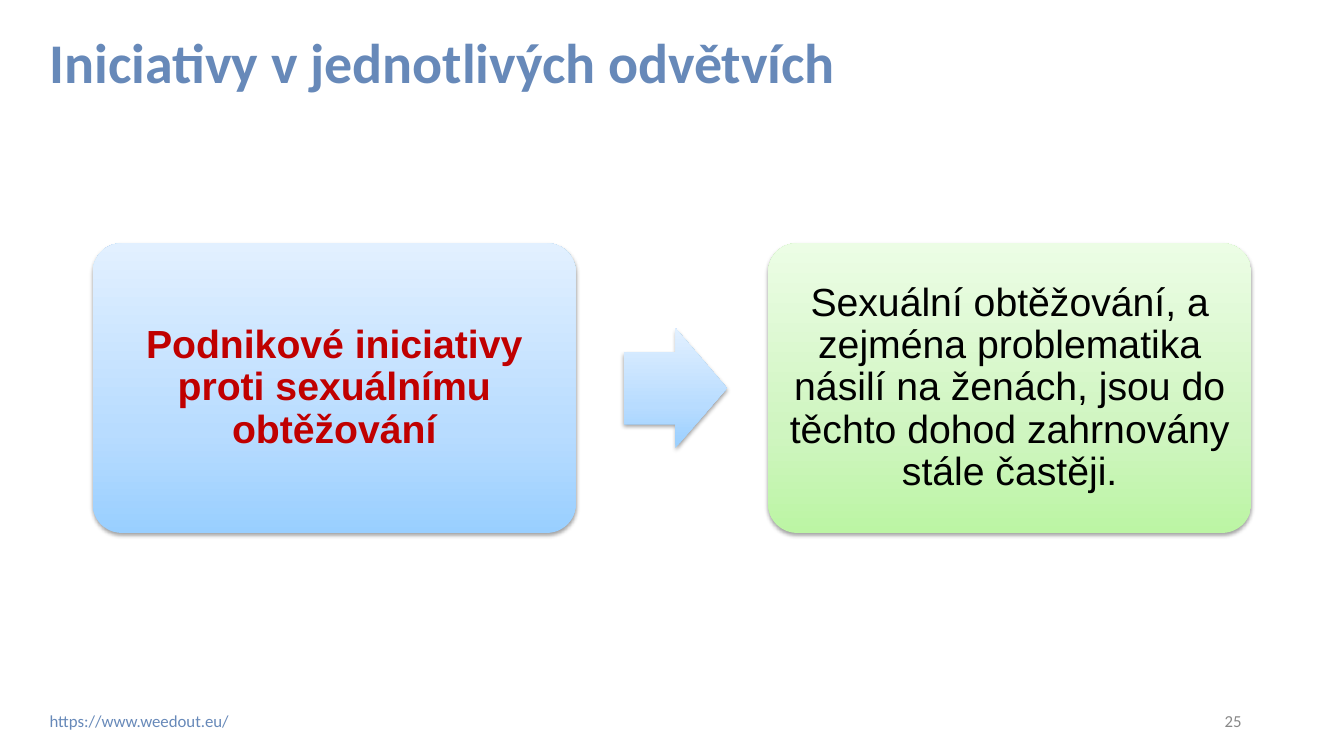
import pptx
import pptx.dml.color
import pptx.enum.shapes
import pptx.enum.text
import pptx.oxml
import pptx.oxml.ns
import pptx.util

Cm = pptx.util.Cm
Pt = pptx.util.Pt
Align = pptx.enum.text.PP_ALIGN
Anchor = pptx.enum.text.MSO_ANCHOR
Shape = pptx.enum.shapes.MSO_SHAPE

COLORS = {
    "heading": "6789B9",
    "accent": "C00000",
    "body": "000000",
    "number": "888888",
    "shadow": "000000",
}
# Gradient stops from bottom to top, in percent
BLUE = {0: "99CFFF", 35: "B8DCFF", 100: "E2F0FF"}
GREEN = {0: "BCF5A4", 35: "CFF5C0", 100: "ECFDE5"}


class SlideBuilder:
    def __init__(self, page):
        self.page = page

    def add_text(self, box, text, size, font, color, bold=False, align=Align.LEFT,
                 anchor=Anchor.TOP, spacing=1.0, insets=(0.25, 0.13)):
        frame = box.text_frame
        frame.word_wrap = True
        frame.vertical_anchor = anchor
        frame.margin_left = frame.margin_right = Cm(insets[0])
        frame.margin_top = frame.margin_bottom = Cm(insets[1])
        para = frame.paragraphs[0]
        para.alignment = align
        para.line_spacing = spacing
        span = para.add_run()
        span.text = text
        span.font.size = Pt(size)
        span.font.name = font
        span.font.bold = bold
        span.font.color.rgb = pptx.dml.color.RGBColor.from_string(COLORS[color])

    def label(self, left, top, width, height, text, size, color, **style):
        box = self.page.shapes.add_textbox(Cm(left), Cm(top), Cm(width), Cm(height))
        self.add_text(box, text, size, "Calibri", color, **style)

    def block(self, kind, left, top, width, height, stops, adjustments):
        box = self.page.shapes.add_shape(kind, Cm(left), Cm(top), Cm(width), Cm(height))
        for index, value in enumerate(adjustments):
            box.adjustments[index] = value
        box.line.fill.background()
        self.shade(box, stops)
        self.cast_shadow(box)
        return box

    def card(self, left, top, width, height, stops, text, color, bold=False):
        box = self.block(Shape.ROUNDED_RECTANGLE, left, top, width, height, stops, [0.1])
        self.add_text(box, text, 28, "Arial", color, bold, Align.CENTER,
                      Anchor.MIDDLE, 0.9, (0.3, 0.3))

    def shade(self, box, stops):
        box.fill.gradient()
        box.fill.gradient_angle = 90
        stop_list = box._element.spPr.find(".//" + pptx.oxml.ns.qn("a:gsLst"))
        for stop in list(stop_list):
            stop_list.remove(stop)
        for position, color in stops.items():
            stop_list.append(pptx.oxml.parse_xml(
                f'<a:gs {pptx.oxml.ns.nsdecls("a")} pos="{position * 1000}">'
                f'<a:srgbClr val="{color}"/></a:gs>'))

    def cast_shadow(self, box):
        box.shadow.inherit = False
        effects = box._element.spPr.find(pptx.oxml.ns.qn("a:effectLst"))
        effects.append(pptx.oxml.parse_xml(
            f'<a:outerShdw {pptx.oxml.ns.nsdecls("a")} blurRad="{Pt(3.1)}" '
            f'dist="{Pt(1.6)}" dir="5400000" rotWithShape="0">'
            f'<a:srgbClr val="{COLORS["shadow"]}"><a:alpha val="37000"/></a:srgbClr>'
            '</a:outerShdw>'))


def main():
    deck = pptx.Presentation()
    deck.slide_width, deck.slide_height = Cm(33.87), Cm(19.05)
    slide = SlideBuilder(deck.slides.add_slide(deck.slide_layouts[6]))

    # Two cards joined by an arrow
    card_top, card_width, card_height = 6.13, 12.17, 7.3
    arrow_height = 3.02
    arrow_top = card_top + (card_height - arrow_height) / 2
    slide.card(2.34, card_top, card_width, card_height, BLUE,
               "Podnikové iniciativy proti sexuálnímu obtěžování", "accent", bold=True)
    slide.block(Shape.RIGHT_ARROW, 15.72, arrow_top, 2.6, arrow_height, BLUE, [0.6, 0.5])
    slide.card(19.36, card_top, card_width, card_height, GREEN,
               "Sexuální obtěžování, a zejména problematika násilí na ženách, "
               "jsou do těchto dohod zahrnovány stále častěji.", "body")

    # Footer
    slide.label(23.92, 17.65, 7.62, 1.01, "25", 12, "number",
                align=Align.RIGHT, anchor=Anchor.MIDDLE)
    slide.label(1, 17.78, 7.6, 0.77, "https://www.weedout.eu/", 12, "heading")

    # Title
    slide.label(1, 0.76, 28.2, 1.7, "Iniciativy v jednotlivých odvětvích", 40,
                "heading", bold=True, spacing=0.9)

    deck.save("out.pptx")


if __name__ == "__main__":
    main()
